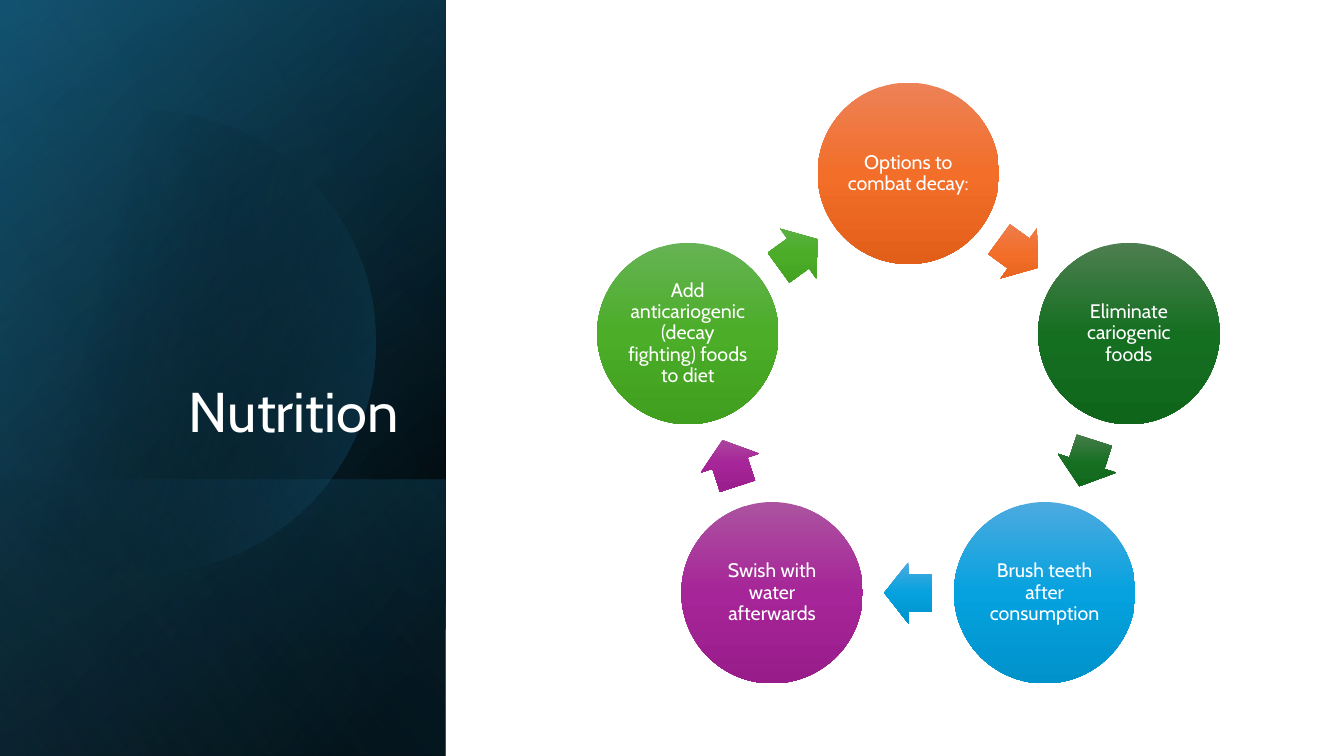
from math import acos, cos, pi, radians, sin

from lxml import etree
from pptx import Presentation
from pptx.dml.color import RGBColor
from pptx.enum.shapes import MSO_SHAPE
from pptx.enum.text import MSO_ANCHOR, PP_ALIGN
from pptx.oxml.ns import qn
from pptx.util import Inches, Pt

WHITE = RGBColor(0xFF, 0xFF, 0xFF)
BLACK = RGBColor(0x00, 0x00, 0x00)
NAVY = RGBColor(0x10, 0x48, 0x62)
TEAL = RGBColor(0x15, 0x60, 0x82)
SKY = RGBColor(0x46, 0xB1, 0xE1)

ORANGES = [RGBColor(0xED, 0x82, 0x57), RGBColor(0xF2, 0x6E, 0x29), RGBColor(0xE2, 0x5F, 0x1A)]
GREENS = [RGBColor(0x4D, 0x7E, 0x50), RGBColor(0x15, 0x6F, 0x21), RGBColor(0x0F, 0x66, 0x1B)]
BLUES = [RGBColor(0x4C, 0xAA, 0xDF), RGBColor(0x05, 0xA2, 0xDF), RGBColor(0x00, 0x92, 0xCB)]
PURPLES = [RGBColor(0xAC, 0x53, 0xA0), RGBColor(0xA6, 0x25, 0x98), RGBColor(0x99, 0x1C, 0x8B)]
LIMES = [RGBColor(0x66, 0xB3, 0x54), RGBColor(0x4B, 0xAD, 0x28), RGBColor(0x40, 0x9F, 0x1E)]

PANEL_WIDTH, SLIDE_HEIGHT = 4.42, 7.5


class NutritionSlide:
    font = "Cabin"
    text_color = WHITE

    def __init__(self, slide):
        self.slide = slide

    def paint(self, shape, stops, angle):
        """Fill with (position %, colour, opacity %) stops; the angle stays fixed to the page."""
        shape.shadow.inherit = False
        shape.line.fill.background()
        shape.fill.background()
        gradient = etree.Element(qn("a:gradFill"), rotWithShape="0")
        stop_list = etree.SubElement(gradient, qn("a:gsLst"))
        for position, color, opacity in stops:
            stop = etree.SubElement(stop_list, qn("a:gs"), pos=str(position * 1000))
            rgb = etree.SubElement(stop, qn("a:srgbClr"), val=str(color))
            if opacity < 100:
                etree.SubElement(rgb, qn("a:alpha"), val=str(opacity * 1000))
        etree.SubElement(gradient, qn("a:lin"), ang=str(angle * 60000), scaled="0")
        properties = shape._element.spPr
        properties.replace(properties.find(qn("a:noFill")), gradient)

    def preset(self, kind, left, top, width, height, stops, angle):
        shape = self.slide.shapes.add_shape(
            kind, Inches(left), Inches(top), Inches(width), Inches(height))
        self.paint(shape, stops, angle)
        return shape

    def panel(self, top, stops, angle):
        self.preset(MSO_SHAPE.RECTANGLE, 0, top, PANEL_WIDTH, SLIDE_HEIGHT - top, stops, angle)

    def cut_disc(self, center_x, center_y, radius, stops, angle, steps=90):
        """Draw a disc whose left part is cut off by the slide edge."""
        reach = acos(-center_x / radius)
        turns = [reach * (2 * i / steps - 1) for i in range(steps + 1)]
        points = [(Inches(max(0, center_x + radius * cos(t))),
                   Inches(center_y + radius * sin(t))) for t in turns]
        builder = self.slide.shapes.build_freeform(*points[0])
        builder.add_line_segments(points[1:], close=True)
        self.paint(builder.convert_to_shape(), stops, angle)

    def label(self, frame, text, size, align, anchor):
        frame.word_wrap = True
        frame.vertical_anchor = anchor
        paragraph = frame.paragraphs[0]
        paragraph.alignment = align
        paragraph.line_spacing = 0.9
        run = paragraph.add_run()
        run.text = text
        run.font.name = self.font
        run.font.size = Pt(size)
        run.font.color.rgb = self.text_color

    def title(self, text, left, top, width, height):
        box = self.slide.shapes.add_textbox(
            Inches(left), Inches(top), Inches(width), Inches(height))
        self.label(box.text_frame, text, 40, PP_ALIGN.RIGHT, MSO_ANCHOR.BOTTOM)

    def step(self, text, center_x, center_y, diameter, stops):
        disc = self.preset(MSO_SHAPE.OVAL, center_x - diameter / 2, center_y - diameter / 2,
                           diameter, diameter, stops, 90)
        frame = disc.text_frame
        frame.margin_left = frame.margin_right = Inches(0.02)
        frame.margin_top = frame.margin_bottom = Inches(0.02)
        self.label(frame, text, 14, PP_ALIGN.CENTER, MSO_ANCHOR.MIDDLE)

    def arrow(self, center_x, center_y, rotation, stops, width=0.48, height=0.61):
        arrow = self.preset(MSO_SHAPE.RIGHT_ARROW, center_x - width / 2, center_y - height / 2,
                            width, height, stops, 90)
        arrow.adjustments[0] = 0.6
        arrow.adjustments[1] = 0.5
        arrow.rotation = rotation


def main():
    presentation = Presentation()
    presentation.slide_width = Inches(13.33)
    presentation.slide_height = Inches(SLIDE_HEIGHT)
    page = NutritionSlide(presentation.slides.add_slide(presentation.slide_layouts[6]))

    # Dark side panel, built from layered gradients
    page.panel(0, [(8, BLACK, 100), (100, NAVY, 100)], 220)
    page.panel(0, [(0, BLACK, 0), (99, TEAL, 46)], 240)
    page.panel(4.76, [(2, TEAL, 29), (100, BLACK, 30)], 140)
    page.cut_disc(1.43, 3.39, 2.29, [(29, BLACK, 0), (100, TEAL, 43)], 14)
    page.panel(0, [(0, BLACK, 0), (99, SKY, 11)], 150)
    page.title("Nutrition", 0.64, 1.84, 3.41, 2.62)

    # Cycle of steps, clockwise from the top
    steps = [
        ("Options to combat decay:", ORANGES),
        ("Eliminate cariogenic foods", GREENS),
        ("Brush teeth after consumption", BLUES),
        ("Swish with water afterwards", PURPLES),
        ("Add anticariogenic (decay fighting) foods to diet", LIMES),
    ]
    cycle_x, cycle_y, cycle_radius = 9.01, 4.02, 2.3
    turn = 360 / len(steps)
    arrow_radius = cycle_radius * cos(pi / len(steps))
    for i, (text, shades) in enumerate(steps):
        stops = [(position, shade, 100) for position, shade in zip((0, 50, 100), shades)]
        step_angle = radians(i * turn)
        page.step(text, cycle_x + cycle_radius * sin(step_angle),
                  cycle_y - cycle_radius * cos(step_angle), 1.8, stops)
        arrow_turn = (i + 0.5) * turn
        arrow_angle = radians(arrow_turn)
        page.arrow(cycle_x + arrow_radius * sin(arrow_angle),
                   cycle_y - arrow_radius * cos(arrow_angle), arrow_turn, stops)

    presentation.save("out.pptx")


if __name__ == "__main__":
    main()
